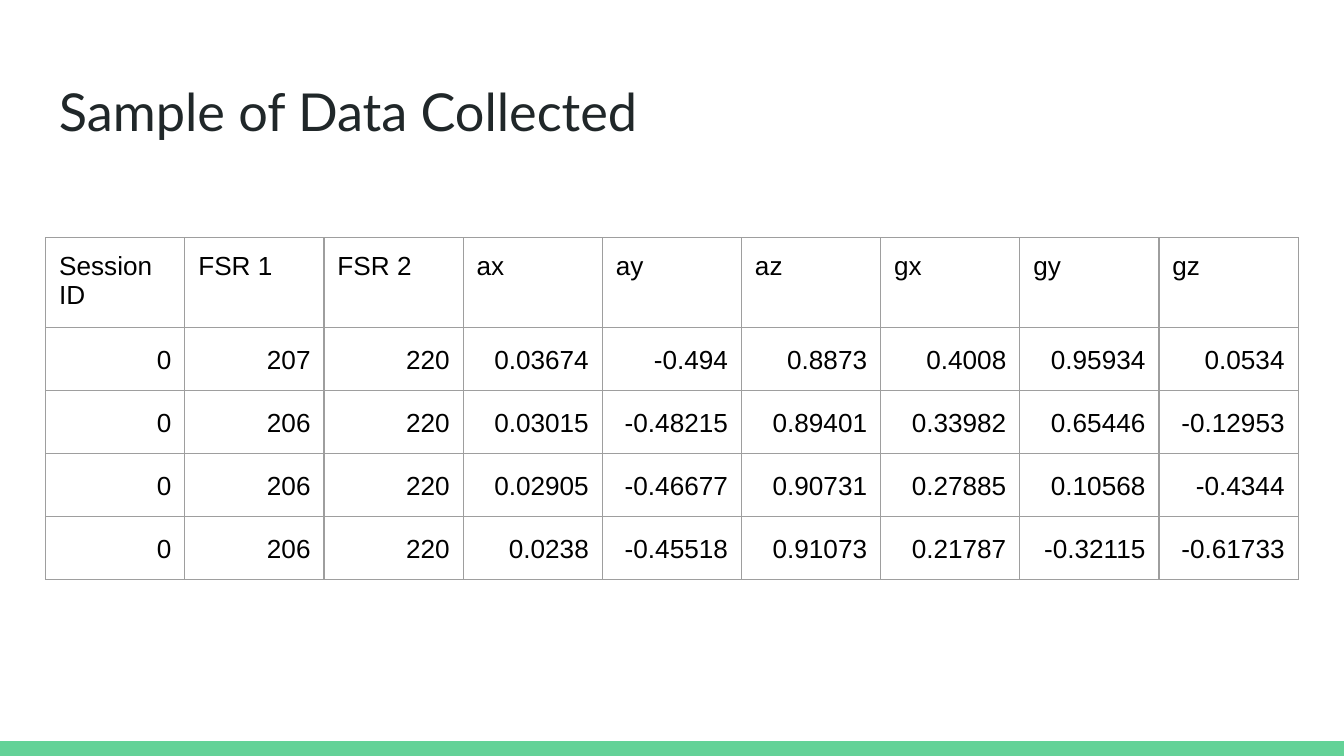
"""Build a slide with a table of sample sensor readings."""
from lxml import etree
from pptx import Presentation
from pptx.dml.color import RGBColor
from pptx.enum.shapes import MSO_SHAPE
from pptx.enum.text import MSO_ANCHOR, PP_ALIGN
from pptx.oxml.ns import qn
from pptx.util import Inches, Pt

RECTANGLE = MSO_SHAPE.RECTANGLE
TOP = MSO_ANCHOR.TOP
LEFT, RIGHT = PP_ALIGN.LEFT, PP_ALIGN.RIGHT

TITLE = "Sample of Data Collected"
HEADERS = ["Session ID", "FSR 1", "FSR 2", "ax", "ay", "az", "gx", "gy", "gz"]
READINGS = [
    ["0", "207", "220", "0.03674", "-0.494", "0.8873", "0.4008", "0.95934", "0.0534"],
    ["0", "206", "220", "0.03015", "-0.48215", "0.89401", "0.33982", "0.65446", "-0.12953"],
    ["0", "206", "220", "0.02905", "-0.46677", "0.90731", "0.27885", "0.10568", "-0.4344"],
    ["0", "206", "220", "0.0238", "-0.45518", "0.91073", "0.21787", "-0.32115", "-0.61733"],
]
COLORS = {"bar": "63D297", "title": "202729", "text": "000000", "border": "9E9E9E"}

SLIDE_WIDTH = 10
SLIDE_HEIGHT = SLIDE_WIDTH * 9 / 16
MARGIN = 0.34
CONTENT_WIDTH = SLIDE_WIDTH - 2 * MARGIN
BAR_HEIGHT = 0.11
TABLE_TOP = 1.77
ROW_HEIGHT = 0.42
INSET = Inches(0.1)


def style(paragraph, font_name, size, color):
    paragraph.font.name = font_name
    paragraph.font.size = Pt(size)
    paragraph.font.color.rgb = RGBColor.from_string(COLORS[color])


def set_insets(holder):
    holder.margin_left = holder.margin_right = INSET
    holder.margin_top = holder.margin_bottom = INSET


def add_borders(cell):
    properties = cell._tc.get_or_add_tcPr()
    for position, side in enumerate(("lnL", "lnR", "lnT", "lnB")):
        line = etree.Element(qn(f"a:{side}"), w=str(Pt(0.75)))
        fill = etree.SubElement(line, qn("a:solidFill"))
        etree.SubElement(fill, qn("a:srgbClr"), val=COLORS["border"])
        properties.insert(position, line)


def add_bar(slide):
    bar = slide.shapes.add_shape(
        RECTANGLE, 0, Inches(SLIDE_HEIGHT - BAR_HEIGHT), Inches(SLIDE_WIDTH), Inches(BAR_HEIGHT))
    bar.shadow.inherit = False
    bar.fill.solid()
    bar.fill.fore_color.rgb = RGBColor.from_string(COLORS["bar"])
    bar.line.fill.background()


def add_title(slide):
    title = slide.shapes.add_textbox(
        Inches(MARGIN), Inches(0.49), Inches(CONTENT_WIDTH), Inches(0.63)).text_frame
    title.word_wrap = True
    title.vertical_anchor = TOP
    set_insets(title)
    title.text = TITLE
    style(title.paragraphs[0], "Lato", 28, "title")


def add_readings(slide):
    rows = [HEADERS] + READINGS
    table = slide.shapes.add_table(
        len(rows), len(HEADERS), Inches(MARGIN), Inches(TABLE_TOP),
        Inches(CONTENT_WIDTH), Inches(ROW_HEIGHT * len(rows))).table
    table.horz_banding = False
    table.first_row = False
    for row_index, values in enumerate(rows):
        for column_index, value in enumerate(values):
            cell = table.cell(row_index, column_index)
            cell.text = value
            cell.fill.background()
            set_insets(cell)
            add_borders(cell)
            paragraph = cell.text_frame.paragraphs[0]
            paragraph.alignment = RIGHT if row_index else LEFT
            if row_index:
                paragraph.line_spacing = 1.15
            style(paragraph, "Arial", 14, "text")


def main():
    presentation = Presentation()
    presentation.slide_width = Inches(SLIDE_WIDTH)
    presentation.slide_height = Inches(SLIDE_HEIGHT)
    slide = presentation.slides.add_slide(presentation.slide_layouts[6])
    add_bar(slide)
    add_title(slide)
    add_readings(slide)
    presentation.save("out.pptx")


if __name__ == "__main__":
    main()
